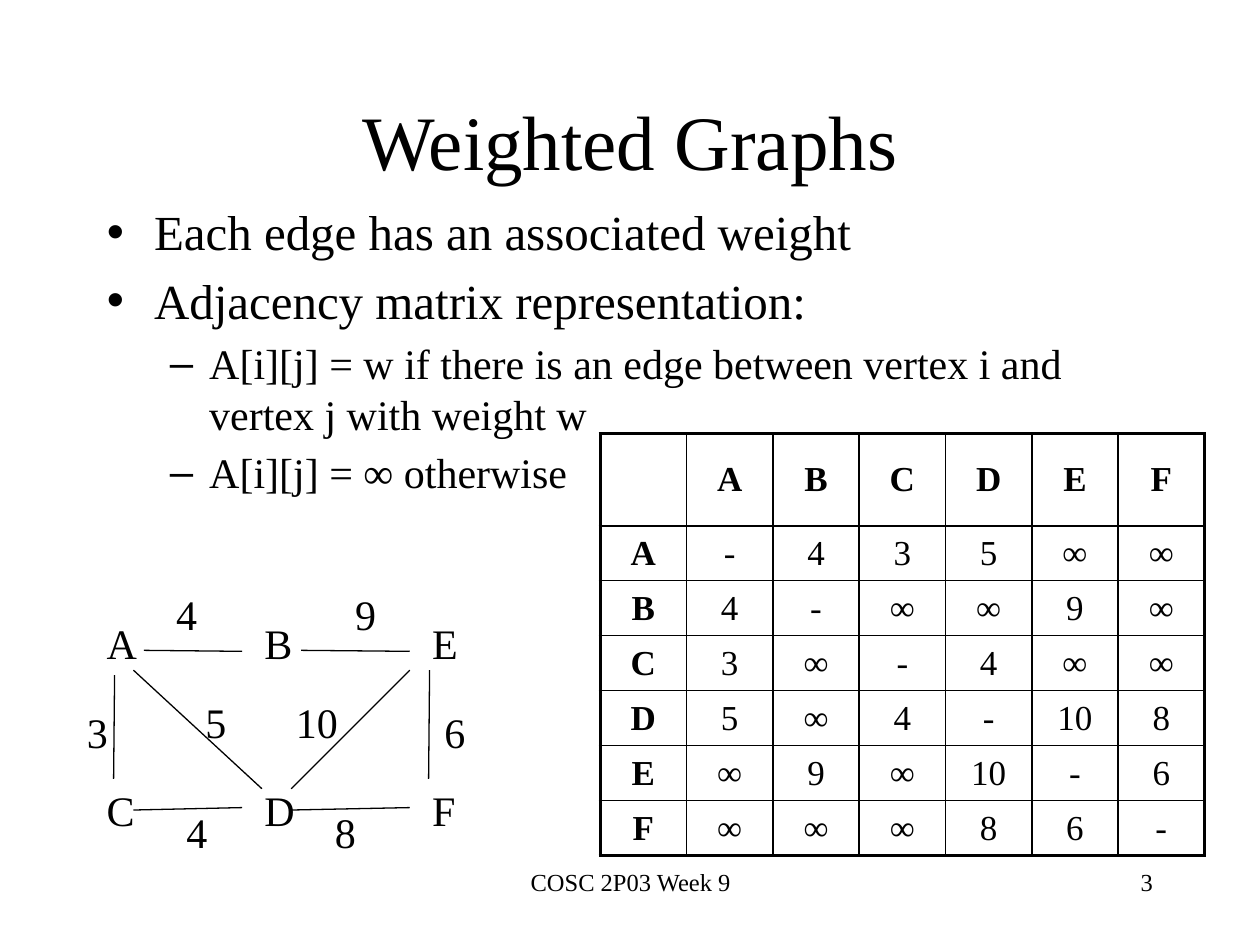
from lxml.etree import SubElement
from pptx import Presentation
from pptx.dml.color import RGBColor
from pptx.enum.shapes import MSO_CONNECTOR
from pptx.enum.text import MSO_ANCHOR, MSO_AUTO_SIZE, PP_ALIGN as Align
from pptx.oxml.ns import qn
from pptx.util import Cm, Pt

BLACK = RGBColor(0, 0, 0)
FONT = "Times New Roman"


def write(para, text, size, align=None, bold=False):
    para.text = text
    para.alignment = align
    para.font.name = FONT
    para.font.size = Pt(size)
    para.font.bold = bold
    para.font.color.rgb = BLACK


def add_label(text, left, top, width=0.79, size=24, align=Align.CENTER):
    box = page.shapes.add_textbox(Cm(left), Cm(top), Cm(width), Cm(1.27))
    box.text_frame.word_wrap = True
    write(box.text_frame.paragraphs[0], text, size, align)


deck = Presentation()
deck.slide_width, deck.slide_height = Cm(25.4), Cm(19.05)
page = deck.slides.add_slide(deck.slide_layouts[1])

# Title
title = page.shapes.title
title.left, title.top, title.width, title.height = Cm(1.9), Cm(1.7), Cm(21.6), Cm(2.23)
title.text_frame.auto_size = MSO_AUTO_SIZE.NONE
write(title.text_frame.paragraphs[0], "Weighted Graphs", 44, Align.CENTER)

# Bullet list; the levels carry their own bullets and indents
body = page.placeholders[1]
body.left, body.top, body.width, body.height = Cm(1.9), Cm(3.94), Cm(21), Cm(13)
body.text_frame.auto_size = MSO_AUTO_SIZE.NONE
bullets = [
    (0, "Each edge has an associated weight"),
    (0, "Adjacency matrix representation:"),
    (1, "A[i][j] = w if there is an edge between vertex i and vertex j with weight w"),
    (1, "A[i][j] = ∞ otherwise"),
]
for index, (level, text) in enumerate(bullets):
    para = body.text_frame.add_paragraph() if index else body.text_frame.paragraphs[0]
    para.level = level
    write(para, text, (28, 24)[level])

# Footer and page number
add_label("COSC 2P03 Week 9", 8.69, 17.35, 8.05, 14)
add_label("3", 18.21, 17.35, 5.28, 14, Align.RIGHT)

# Graph edges: ends, weight, line from and to, place of the weight
edges = [
    ("AB", 4, (2.9, 13.11), (4.88, 13.13), (3.3, 11.73)),
    ("BE", 9, (6.07, 13.11), (8.26, 13.13), (6.91, 11.73)),
    ("EF", 6, (8.66, 13.51), (8.64, 15.7), (8.71, 14.12)),
    ("AD", 5, (5.28, 15.9), (2.69, 13.51), (3.89, 13.92)),
    ("DE", 10, (8.26, 13.51), (5.87, 15.9), (5.69, 13.92)),
    ("AC", 3, (2.29, 15.7), (2.31, 13.61), (1.5, 14.12)),
    ("DF", 8, (5.87, 16.33), (8.26, 16.28), (6.5, 16.13)),
    ("CD", 4, (2.69, 16.33), (4.88, 16.28), (3.51, 16.13)),
]
for ends, weight, start, end, place in edges:
    edge = page.shapes.add_connector(
        MSO_CONNECTOR.STRAIGHT, *(Cm(value) for value in start + end))
    edge.line.color.rgb = BLACK
    edge.line.width = Pt(0.75)
    SubElement(edge.element.spPr, qn("a:effectLst"))
    add_label(str(weight), *place, width=1.4 if weight > 9 else 0.79)

# Graph vertices
for row_names, top in (("ABE", 12.32), ("CDF", 15.7)):
    for name, left in zip(row_names, (1.9, 5.08, 8.46)):
        add_label(name, left, top)

# Adjacency matrix, filled from the edges
vertices = "ABCDEF"
weights = {}
for ends, weight, *_ in edges:
    weights[ends] = weights[ends[::-1]] = str(weight)
rows = [["", *vertices]]
for start in vertices:
    rows.append([start] + ["-" if start == end else weights.get(start + end, "∞")
                           for end in vertices])

count = len(rows)
frame = page.shapes.add_table(count, count, Cm(12.1), Cm(8.74), Cm(12.18), Cm(8.46))
table = frame.table
table.first_row = table.horz_banding = False
for column in table.columns:
    column.width = Cm(1.74)
for r, row in enumerate(rows):
    table.rows[r].height = Cm(1.1 if r else 1.86)
    for c, text in enumerate(row):
        cell = table.cell(r, c)
        cell.vertical_anchor = MSO_ANCHOR.MIDDLE
        cell.margin_left = cell.margin_right = Cm(0.13)
        cell.margin_top = cell.margin_bottom = Cm(0.13 if r else 0)
        write(cell.text_frame.paragraphs[0], text, 20, Align.CENTER, r == 0 or c == 0)
        # Heavy outer frame, thin inner rules
        borders = {
            "a:lnL": 2 if c == 0 else 1,
            "a:lnR": 2 if c == count - 1 else 1,
            "a:lnT": {0: 2, 1: 1}.get(r, 0.75),
            "a:lnB": {0: 1, count - 1: 2}.get(r, 0.75),
        }
        properties = cell._tc.get_or_add_tcPr()
        for tag, width in borders.items():
            line = SubElement(properties, qn(tag), w=str(Pt(width)))
            fill = SubElement(line, qn("a:solidFill"))
            SubElement(fill, qn("a:srgbClr"), val=str(BLACK))
        cell.fill.background()

deck.save("out.pptx")
